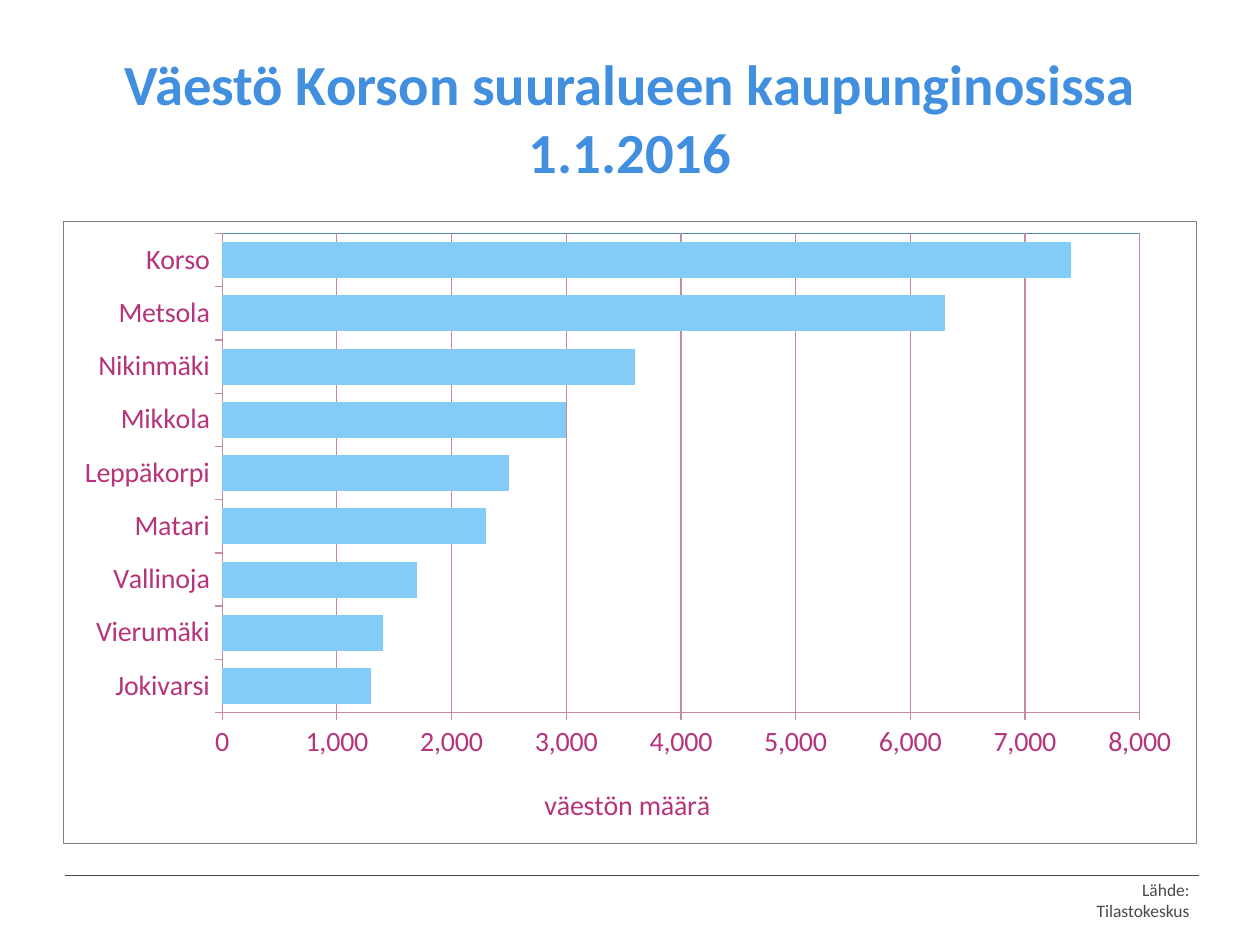
from typing import NamedTuple, Optional

from lxml import etree
from pptx import Presentation
from pptx.chart.data import CategoryChartData
from pptx.dml.color import RGBColor
from pptx.enum.chart import XL_CHART_TYPE, XL_TICK_MARK
from pptx.enum.shapes import MSO_CONNECTOR
from pptx.enum.text import MSO_ANCHOR, MSO_AUTO_SIZE, PP_ALIGN
from pptx.oxml import parse_xml
from pptx.oxml.ns import nsdecls, qn
from pptx.util import Pt

BAR_CLUSTERED = XL_CHART_TYPE.BAR_CLUSTERED
TICK_OUTSIDE = XL_TICK_MARK.OUTSIDE
STRAIGHT = MSO_CONNECTOR.STRAIGHT
MIDDLE = MSO_ANCHOR.MIDDLE
NO_AUTOFIT = MSO_AUTO_SIZE.NONE
CENTER, RIGHT = PP_ALIGN.CENTER, PP_ALIGN.RIGHT

TITLE_BLUE = RGBColor(0x41, 0x8F, 0xDE)
BAR_BLUE = RGBColor(0x84, 0xCC, 0xF8)
PLOT_BLUE = RGBColor(0x4F, 0x81, 0xBD)
LABEL_PINK = RGBColor(0xB6, 0x34, 0x7A)
GRID_PINK = RGBColor(0xC4, 0x8A, 0xA6)
BORDER_GRAY = RGBColor(0x80, 0x80, 0x80)
TEXT_GRAY = RGBColor(0x47, 0x4A, 0x4C)
FONT = "Calibri"


class District(NamedTuple):
    name: str
    population: int


DISTRICTS = [
    District("Jokivarsi", 1300),
    District("Vierumäki", 1400),
    District("Vallinoja", 1700),
    District("Matari", 2300),
    District("Leppäkorpi", 2500),
    District("Mikkola", 3000),
    District("Nikinmäki", 3600),
    District("Metsola", 6300),
    District("Korso", 7400),
]


def set_font(font, size: float, color: RGBColor, bold: bool = False) -> None:
    font.name, font.size, font.bold = FONT, Pt(size), bold
    font.color.rgb = color


def fill_text(shape, text: str, align, size: float, color: RGBColor, bold: bool = False) -> None:
    frame = shape.text_frame
    frame.word_wrap, frame.auto_size, frame.vertical_anchor = True, NO_AUTOFIT, MIDDLE
    para = frame.paragraphs[0]
    para.text, para.alignment = text, align
    set_font(para.font, size, color, bold)


def set_layout(parent, index: int, x: float, y: float,
               size: Optional[tuple[float, float]] = None) -> None:
    """Place a chart part by hand, in fractions of the chart's area."""
    for old in parent.findall(qn("c:layout")):
        parent.remove(old)
    settings = [("xMode", "edge"), ("yMode", "edge"), ("x", x), ("y", y)]
    if size:
        settings.insert(0, ("layoutTarget", "inner"))
        settings += [("w", size[0]), ("h", size[1])]
    layout = etree.Element(qn("c:layout"))
    manual = etree.SubElement(layout, qn("c:manualLayout"))
    for tag, value in settings:
        etree.SubElement(manual, qn(f"c:{tag}"), val=str(value))
    parent.insert(index, layout)


def outline_properties(color: RGBColor):
    return parse_xml(
        f'<c:spPr {nsdecls("c", "a")}><a:noFill/><a:ln w="{Pt(0.75)}">'
        f'<a:solidFill><a:srgbClr val="{color}"/></a:solidFill></a:ln></c:spPr>'
    )


def add_population_chart(slide) -> None:
    data = CategoryChartData(number_format="General")
    data.categories = [district.name for district in DISTRICTS]
    data.add_series("Series 1", [district.population for district in DISTRICTS])
    chart = slide.shapes.add_chart(
        BAR_CLUSTERED, Pt(36), Pt(126), Pt(648), Pt(356.4), data
    ).chart
    chart.has_legend = chart.has_title = False
    set_font(chart.font, 16, LABEL_PINK)

    plot = chart.plots[0]
    plot.gap_width, plot.vary_by_categories = 48, False
    bars = plot.series[0].format.fill
    bars.solid()
    bars.fore_color.rgb = BAR_BLUE

    values = chart.value_axis
    values.minimum_scale, values.maximum_scale, values.major_unit = 0, 8000, 1000
    values.has_major_gridlines = True
    values.tick_labels.number_format = "#,##0"
    values.tick_labels.number_format_is_linked = False
    for axis in (chart.category_axis, values):
        axis.major_tick_mark = TICK_OUTSIDE
    for part in (chart.category_axis, values, values.major_gridlines):
        part.format.line.color.rgb = GRID_PINK
        part.format.line.width = Pt(0.75)

    values.has_title = True
    para = values.axis_title.text_frame.paragraphs[0]
    para.text = "väestön määrä"
    set_font(para.font, 16, LABEL_PINK)

    space = chart.element
    area = space.find(qn("c:chart"))
    plot_area = area.find(qn("c:plotArea"))
    set_layout(plot_area, 0, 0.14, 0.02, (0.81, 0.77))
    set_layout(plot_area.find(qn("c:valAx")).find(qn("c:title")), 1, 0.42, 0.9)
    plot_area.append(outline_properties(PLOT_BLUE))
    area.addnext(outline_properties(BORDER_GRAY))


def add_footer(slide) -> None:
    rule = slide.shapes.add_connector(STRAIGHT, Pt(37), Pt(500.4), Pt(685), Pt(500.4))
    rule.line.color.rgb, rule.line.width = TEXT_GRAY, Pt(0.5)
    etree.SubElement(rule.element.spPr, qn("a:effectLst"))
    source = slide.shapes.add_textbox(Pt(592.5), Pt(497), Pt(94.3), Pt(34.5))
    fill_text(source, "Lähde: Tilastokeskus", RIGHT, 10, TEXT_GRAY)


def main() -> None:
    deck = Presentation()
    deck.slide_width, deck.slide_height = Pt(720), Pt(540)
    slide = deck.slides.add_slide(deck.slide_layouts[5])
    title = slide.shapes.title
    title.left, title.top, title.width, title.height = Pt(36), Pt(21.6), Pt(648), Pt(90)
    fill_text(title, "Väestö Korson suuralueen kaupunginosissa 1.1.2016",
              CENTER, 32.4, TITLE_BLUE, bold=True)
    add_population_chart(slide)
    add_footer(slide)
    deck.save("out.pptx")


if __name__ == "__main__":
    main()
